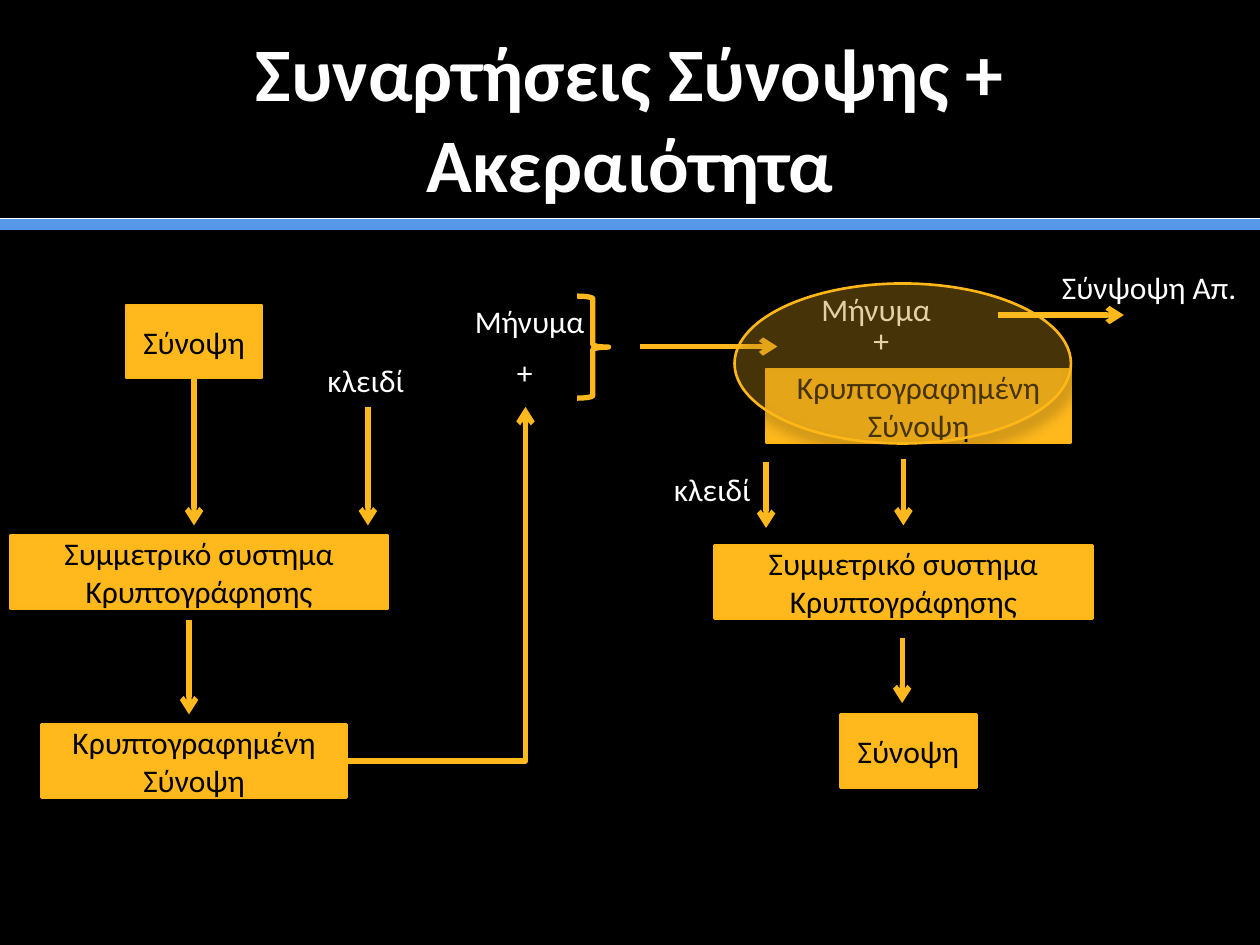
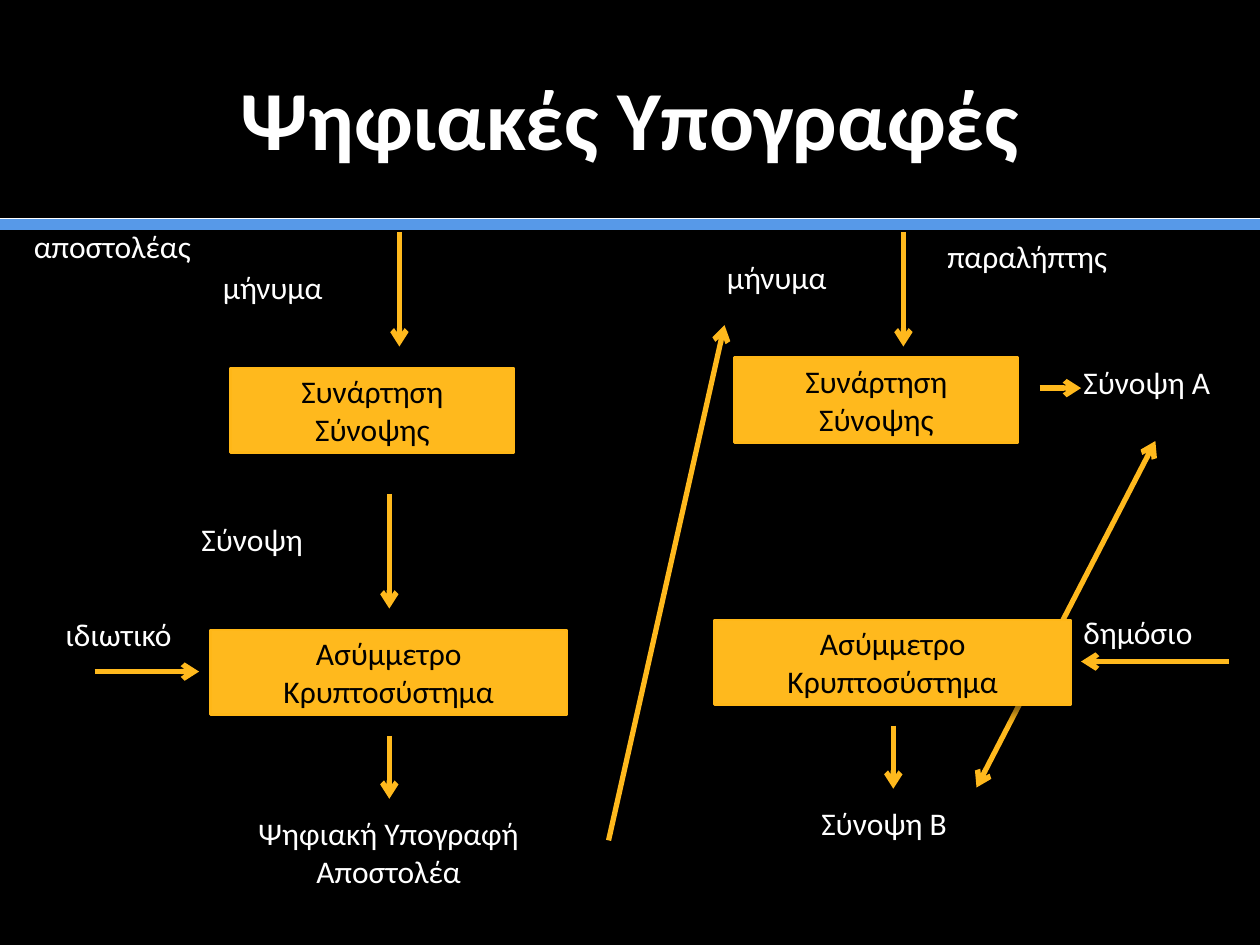
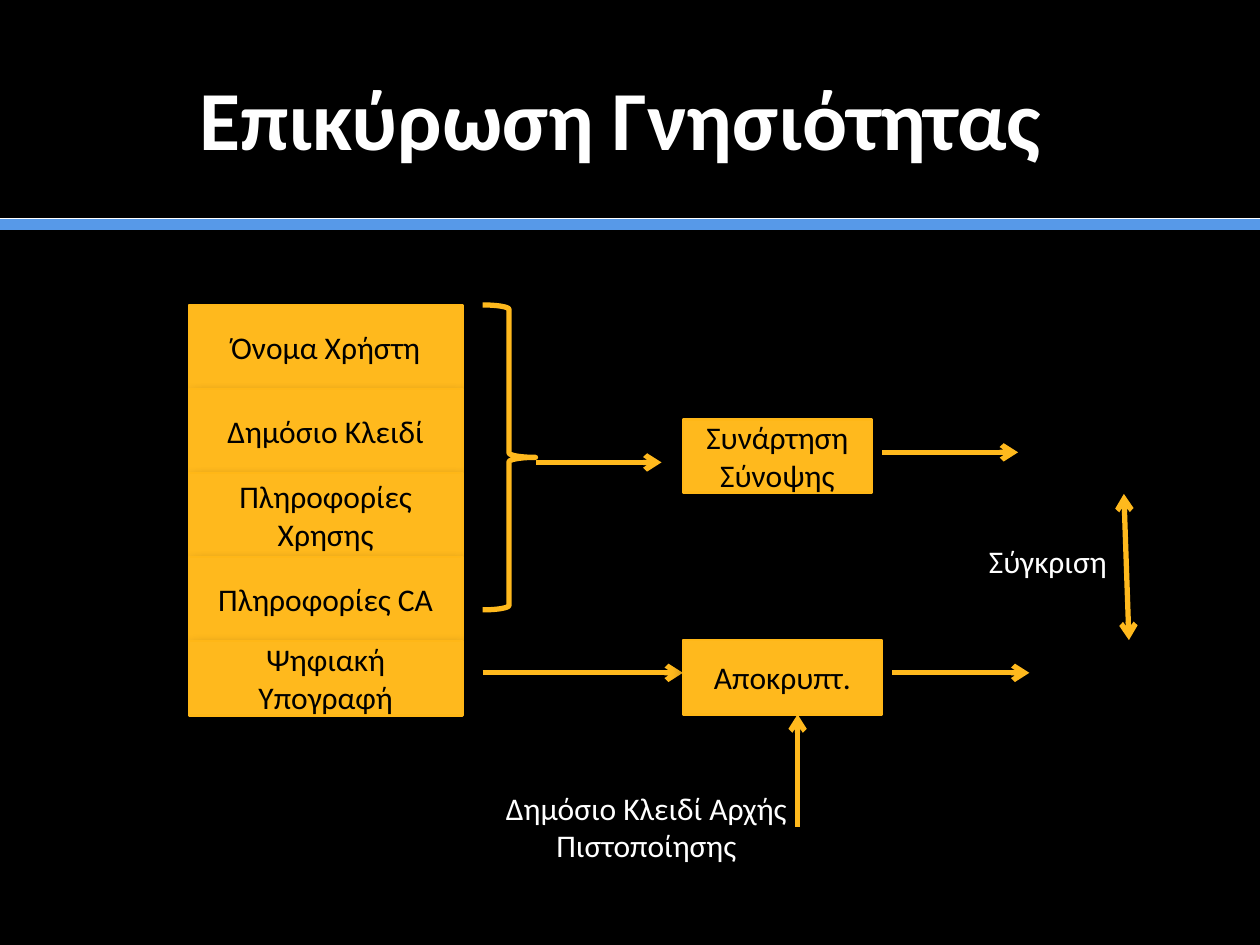
from dataclasses import dataclass
from typing import Union

from lxml.etree import SubElement as Sub
from pptx import Presentation
from pptx.dml.color import RGBColor as Color
from pptx.enum.shapes import MSO_CONNECTOR as Route, MSO_SHAPE as Form
from pptx.enum.text import MSO_ANCHOR as Anchor, MSO_AUTO_SIZE as Fit, PP_ALIGN as Align
from pptx.oxml.ns import qn
from pptx.util import Inches, Pt


@dataclass(frozen=True)
class Theme:
    back: str = "000000"
    white: str = "FFFFFF"
    ink: str = "000000"
    gold: str = "FFB91D"
    edge: str = "FFB717"
    blue: str = "5799E8"
    font: str = "Calibri"
    title: float = 48
    tight: float = 43.2
    text: float = 18
    stroke: float = 3
    rim: float = 1.5
    band: float = 7
    hair: float = 0.5


@dataclass(frozen=True)
class Box:
    x: float
    y: float
    w: float
    h: float
    text: str = ""
    form: Form = Form.RECTANGLE
    alpha: int = 100


@dataclass(frozen=True)
class Label:
    x: float
    y: float
    w: float
    h: float
    text: str
    align: Align = Align.LEFT


@dataclass(frozen=True)
class Brace:
    x: float
    y: float
    w: float
    h: float


@dataclass(frozen=True)
class Arrow:
    x1: float
    y1: float
    x2: float
    y2: float
    both: bool = False
    bent: bool = False


Piece = Union[Box, Label, Brace, Arrow]


@dataclass(frozen=True)
class Page:
    title: str
    size: float
    pieces: list[Piece]


LOOK = Theme()
MID = Align.CENTER


def tint(name: str) -> Color:
    return Color.from_string(name)


def write(frame, text: str, color: str, size: float, align: Align, bold: bool = False) -> None:
    frame.word_wrap = True
    frame.auto_size = Fit.NONE
    for i, line in enumerate(text.split("\n")):
        para = frame.add_paragraph() if i else frame.paragraphs[0]
        para.alignment = align
        run = para.add_run()
        run.text = line
        font = run.font
        font.name, font.size, font.bold = LOOK.font, Pt(size), bold
        font.color.rgb = tint(color)


def place(item) -> tuple:
    return Inches(item.x), Inches(item.y), Inches(item.w), Inches(item.h)


def paint(line, color: str, width: float) -> None:
    line.color.rgb = tint(color)
    line.width = Pt(width)


def shade(shape) -> None:
    glow = shape.element.spPr.find(qn("a:effectLst"))
    outer = Sub(glow, qn("a:outerShdw"), blurRad=str(Pt(8)), dist=str(Pt(5)),
                dir=str(70 * 60000), rotWithShape="0")
    black = Sub(outer, qn("a:srgbClr"), val=LOOK.ink)
    Sub(black, qn("a:alpha"), val="50000")


def add_box(slide, item: Box) -> None:
    shape = slide.shapes.add_shape(item.form, *place(item))
    shape.shadow.inherit = False
    shape.fill.solid()
    shape.fill.fore_color.rgb = tint(LOOK.gold)
    if item.alpha < 100:
        color = shape.element.spPr.find(qn("a:solidFill"))[0]
        Sub(color, qn("a:alpha"), val=str(item.alpha * 1000))
    paint(shape.line, LOOK.edge, LOOK.rim)
    shade(shape)
    if item.text:
        shape.text_frame.vertical_anchor = Anchor.MIDDLE
        write(shape.text_frame, item.text, LOOK.ink, LOOK.text, MID)


def add_label(slide, item: Label) -> None:
    frame = slide.shapes.add_textbox(*place(item)).text_frame
    write(frame, item.text, LOOK.white, LOOK.text, item.align)


def add_brace(slide, item: Brace) -> None:
    shape = slide.shapes.add_shape(Form.RIGHT_BRACE, *place(item))
    shape.shadow.inherit = False
    shape.fill.background()
    paint(shape.line, LOOK.gold, LOOK.stroke)


def add_line(slide, item: Arrow, color: str, width: float):
    kind = Route.ELBOW if item.bent else Route.STRAIGHT
    link = slide.shapes.add_connector(kind, Inches(item.x1), Inches(item.y1),
                                      Inches(item.x2), Inches(item.y2))
    paint(link.line, color, width)
    Sub(link.element.spPr, qn("a:effectLst"))
    return link


def add_arrow(slide, item: Arrow) -> None:
    link = add_line(slide, item, LOOK.gold, LOOK.stroke)
    props = link.element.spPr
    if item.bent:
        props.find(qn("a:prstGeom")).set("prst", "bentConnector2")
    stroke = props.find(qn("a:ln"))
    for end in ("headEnd", "tailEnd") if item.both else ("tailEnd",):
        Sub(stroke, qn("a:" + end), type="arrow")


DRAW = {Box: add_box, Label: add_label, Brace: add_brace, Arrow: add_arrow}


def add_page(deck, page: Page) -> None:
    slide = deck.slides.add_slide(deck.slide_layouts[5])
    add_line(slide, Arrow(0, 1.78, 10, 1.78), LOOK.blue, LOOK.band)
    add_line(slide, Arrow(0, 1.73, 10, 1.73), LOOK.white, LOOK.hair)
    head = slide.shapes.title
    head.left, head.top = Inches(0.5), Inches(0.3)
    head.width, head.height = Inches(9), Inches(1.25)
    head.text_frame.vertical_anchor = Anchor.MIDDLE
    write(head.text_frame, page.title, LOOK.white, page.size, MID, True)
    for piece in page.pieces:
        DRAW[type(piece)](slide, piece)


def digest(x: float, y: float) -> Box:
    return Box(x, y, 1.08, 0.58, "Σύνοψη")


def cipher(x: float, y: float) -> Box:
    return Box(x, y, 3, 0.58, "Συμμετρικό συστημα Κρυπτογράφησης")


def sealed(x: float, y: float) -> Box:
    return Box(x, y, 2.42, 0.58, "Κρυπτογραφημένη\nΣύνοψη")


def key(x: float, y: float) -> Label:
    return Label(x, y, 0.92, 0.4, "κλειδί")


def note(x: float, y: float) -> Label:
    return Label(x, y, 1.5, 0.4, "Μήνυμα")


def plus(x: float, y: float) -> Label:
    return Label(x, y, 1.33, 0.4, "+", MID)


def lane(x: float, y: float) -> list[Piece]:
    return [
        Arrow(x + 1.5, 1.84, x + 1.5, 2.75),
        Box(x + 0.16, y + 2.92, 2.25, 0.67, "Συνάρτηση Σύνοψης"),
        Label(x, y + 2.08, 1.33, 0.5, "μήνυμα"),
        Box(x, y + 5, 2.83, 0.67, "Ασύμμετρο Κρυπτοσύστημα"),
        Arrow(x + 1.42, y + 5.84, x + 1.42, y + 6.34),
    ]


def stack(x: float, y: float, names: list[str]) -> list[Piece]:
    last = len(names) - 1
    return [Box(x, y + i * 2 / 3, 2.17, 0.59 if i == last else 0.67, name)
            for i, name in enumerate(names)]


HASH = Page("Συναρτήσεις Σύνοψης + Ακεραιότητα", LOOK.tight, [
    digest(1, 2.42),
    Arrow(1.54, 3, 1.54, 4.17),
    cipher(0.08, 4.25),
    Arrow(1.5, 4.92, 1.5, 5.67),
    sealed(0.33, 5.75),
    key(2.5, 2.82),
    Arrow(2.92, 3.23, 2.92, 4.17),
    Arrow(2.75, 6.04, 4.17, 3.23, bent=True),
    note(3.67, 2.35),
    plus(3.5, 2.75),
    Brace(4.58, 2.35, 0.25, 0.81),
    Arrow(5.08, 2.75, 6.17, 2.75),
    note(6.42, 2.25),
    sealed(6.08, 2.93),
    plus(6.33, 2.5),
    Box(5.83, 2.25, 2.67, 1.27, form=Form.OVAL, alpha=28),
    cipher(5.67, 4.33),
    key(5.25, 3.68),
    Arrow(7.17, 3.64, 7.17, 4.17),
    Arrow(6.08, 3.67, 6.08, 4.19),
    digest(6.67, 5.67),
    Arrow(7.16, 5.06, 7.16, 5.58),
    Arrow(7.92, 2.5, 8.92, 2.5),
    Label(8.33, 2.08, 1.92, 0.4, "Σύνψοψη Απ."),
])

SIGN = Page("Ψηφιακές Υπογραφές", LOOK.title, [
    Arrow(7.75, 6.25, 9.17, 3.5, both=True),
    *lane(1.67, 0),
    Arrow(3.09, 3.92, 3.09, 4.83),
    Label(1.5, 4.08, 1.42, 0.5, "Σύνοψη"),
    Arrow(0.75, 5.33, 1.58, 5.33),
    Label(0.42, 4.83, 1.42, 0.5, "ιδιωτικό"),
    Label(1.5, 6.41, 3.17, 0.91, "Ψηφιακή Υπογραφή Αποστολέα", MID),
    Label(0.17, 1.75, 2.08, 0.5, "αποστολέας"),
    Arrow(4.83, 6.67, 5.75, 2.58),
    *lane(5.67, -0.08),
    Label(8.5, 4.82, 1.42, 0.5, "δημόσιο"),
    Label(8.5, 2.83, 1.67, 0.5, "Σύνοψη A"),
    Arrow(9.75, 5.25, 8.58, 5.25),
    Label(7.42, 1.83, 2.08, 0.5, "παραλήπτης"),
    Arrow(8.25, 3.08, 8.58, 3.08),
    Label(6.42, 6.33, 1.83, 0.5, "Σύνοψη B"),
])

CHECK = Page("Επικύρωση Γνησιότητας ", LOOK.title, [
    *stack(1.5, 2.42, ["Όνομα Χρήστη", "Δημόσιο Κλειδί", "Πληροφορίες Χρησης",
                       "Πληροφορίες CA", "Ψηφιακή Υπογραφή"]),
    Brace(3.83, 2.42, 0.42, 2.42),
    Arrow(4.25, 3.67, 5.25, 3.67),
    Box(5.42, 3.33, 1.5, 0.58, "Συνάρτηση\nΣύνοψης"),
    Arrow(7, 3.59, 8.08, 3.59),
    Arrow(3.83, 5.34, 5.42, 5.34),
    Box(5.42, 5.08, 1.58, 0.59, "Αποκρυπτ."),
    Label(3.67, 6.21, 2.92, 0.71, "Δημόσιο Κλειδί Αρχής Πιστοποίησης", MID),
    Arrow(6.33, 6.56, 6.33, 5.67),
    Arrow(7.08, 5.34, 8.17, 5.34),
    Arrow(8.96, 5.08, 8.92, 3.92, both=True),
    Label(7.75, 4.25, 1.42, 0.42, "Σύγκριση"),
])


def main() -> None:
    deck = Presentation()
    deck.slide_width, deck.slide_height = Inches(10), Inches(7.5)
    fill = deck.slide_master.background.fill
    fill.solid()
    fill.fore_color.rgb = tint(LOOK.back)
    for page in (HASH, SIGN, CHECK):
        add_page(deck, page)
    deck.save("out.pptx")


if __name__ == "__main__":
    main()
